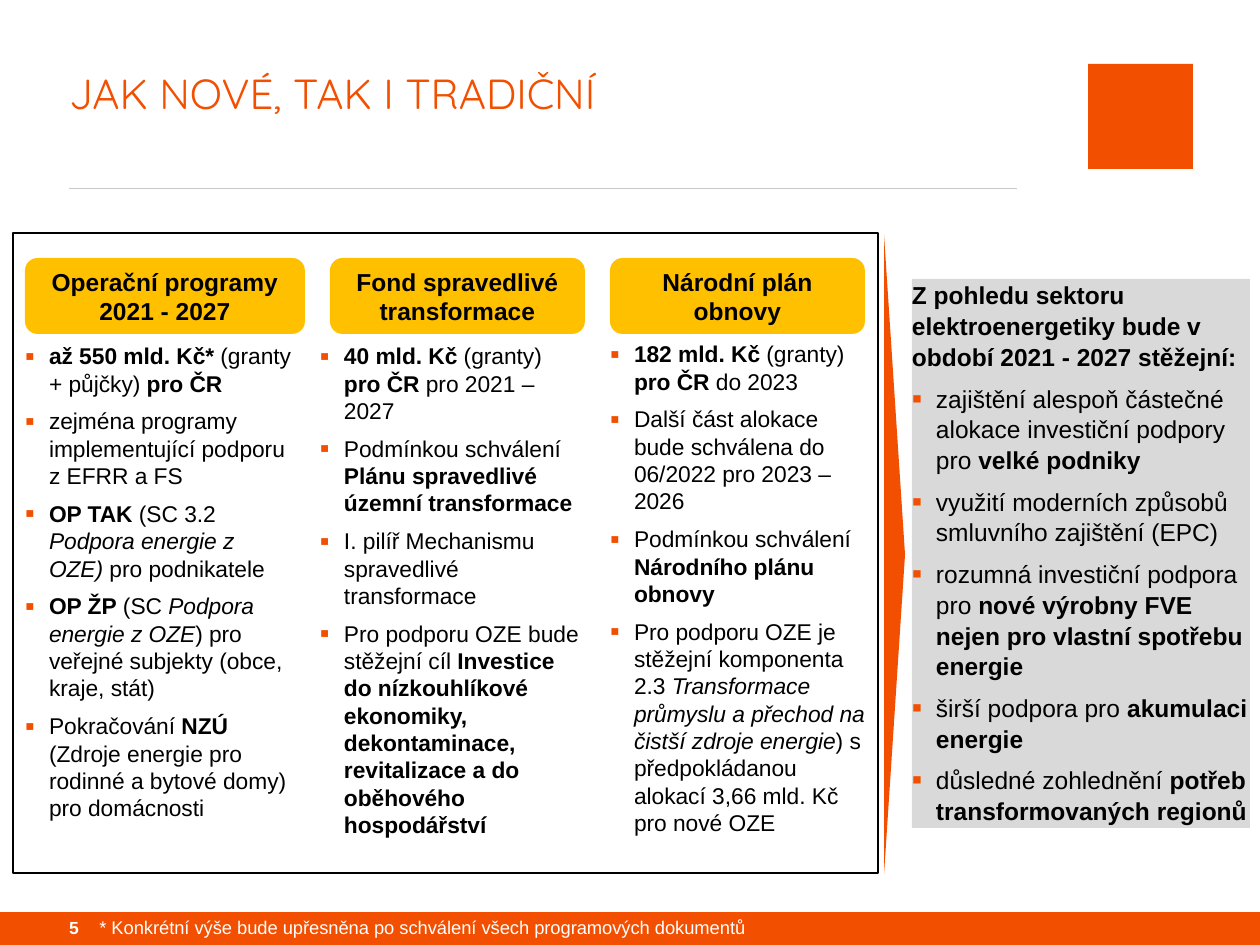
from dataclasses import dataclass
from typing import Optional

from lxml.etree import SubElement
from pptx import Presentation
from pptx.dml.color import RGBColor
from pptx.enum.shapes import MSO_CONNECTOR as Connector, MSO_SHAPE as Shape
from pptx.enum.text import MSO_ANCHOR as Anchor, MSO_AUTO_SIZE as AutoSize, PP_ALIGN as Align
from pptx.oxml.ns import qn
from pptx.util import Emu, Pt

PX_PER_INCH = 126
COLORS = {
    "orange": "F24F00",
    "amber": "FFC000",
    "panel": "D9D9D9",
    "rule": "C8C8C8",
    "black": "000000",
    "white": "FFFFFF",
}
INDENT = 24

# A run is its text and its style: "" plain, "b" bold, "i" italic
Run = tuple[str, str]


@dataclass
class Box:
    left: int
    top: int
    width: int
    height: int


@dataclass
class ProgramColumn:
    heading: str
    pill: Box
    body: Box
    bullets: list[list[Run]]


@dataclass
class TextStyle:
    size: float
    color: str = "black"
    font: str = "Arial"
    bulleted: bool = False
    before: float = 0
    after: float = 0
    spacing: Optional[float] = None
    align: Align = Align.LEFT


COLUMN_STYLE = TextStyle(13, bulleted=True, before=6)
PILL_STYLE = TextStyle(14, align=Align.CENTER)
PANEL_HEADING_STYLE = TextStyle(14, after=6, spacing=1.05)
PANEL_BULLET_STYLE = TextStyle(14, bulleted=True, after=6, spacing=1.05)

COLUMNS = [
    ProgramColumn("Operační programy 2021 - 2027", Box(25, 258, 280, 76), Box(25, 342, 268, 484), [
        [("až 550 mld. Kč* ", "b"), ("(granty + půjčky) ", ""), ("pro ČR", "b")],
        [("zejména programy implementující podporu z EFRR a FS", "")],
        [("OP TAK", "b"), (" (SC 3.2 ", ""), ("Podpora energie z OZE) ", "i"), ("pro podnikatele", "")],
        [("OP ŽP", "b"), (" (SC ", ""), ("Podpora energie z OZE", "i"),
         (") pro veřejné subjekty (obce, kraje, stát)", "")],
        [("Pokračování ", ""), ("NZÚ", "b"),
         (" (Zdroje energie pro rodinné a bytové domy) pro domácnosti", "")],
    ]),
    ProgramColumn("Fond spravedlivé transformace", Box(330, 258, 255, 76), Box(320, 342, 263, 538), [
        [("40 mld. Kč ", "b"), ("(granty) ", ""), ("pro ČR ", "b"), ("pro 2021 – 2027", "")],
        [("Podmínkou schválení ", ""), ("Plánu spravedlivé územní transformace", "b")],
        [("I. pilíř Mechanismu spravedlivé transformace", "")],
        [("Pro podporu OZE bude stěžejní cíl ", ""),
         ("Investice do nízkouhlíkové ekonomiky, dekontaminace, revitalizace "
          "a do oběhového hospodářství", "b")],
    ]),
    ProgramColumn("Národní plán obnovy", Box(610, 258, 255, 76), Box(610, 340, 256, 566), [
        [("182 mld. Kč ", "b"), ("(granty) ", ""), ("pro ČR", "b"), (" do 2023", "")],
        [("Další část alokace bude schválena do 06/2022 pro 2023 – 2026", "")],
        [("Podmínkou schválení ", ""), ("Národního plánu obnovy", "b")],
        [("Pro podporu OZE je stěžejní komponenta 2.3 ", ""),
         ("Transformace průmyslu a přechod na čistší zdroje energie", "i"),
         (") s předpokládanou alokací 3,66 mld. Kč pro nové OZE", "")],
    ]),
]

PANEL_HEADING = "Z pohledu sektoru elektroenergetiky bude v období 2021 - 2027 stěžejní:"
PANEL_BULLETS = [
    [("zajištění alespoň částečné alokace investiční podpory pro ", ""), ("velké podniky", "b")],
    [("využití moderních způsobů smluvního zajištění (EPC)", "")],
    [("rozumná investiční podpora pro ", ""), ("nové výrobny FVE nejen pro vlastní spotřebu energie", "b")],
    [("širší podpora pro ", ""), ("akumulaci energie", "b")],
    [("důsledné zohlednění ", ""), ("potřeb transformovaných regionů", "b")],
]


def px(value: int) -> Emu:
    return Emu(round(value * 914400 / PX_PER_INCH))


def place(box: Box) -> tuple[Emu, ...]:
    return px(box.left), px(box.top), px(box.width), px(box.height)


def color(name: str) -> RGBColor:
    return RGBColor.from_string(COLORS[name])


def add_bullet(paragraph) -> None:
    properties = paragraph._p.get_or_add_pPr()
    properties.set("marL", str(px(INDENT)))
    properties.set("indent", str(-px(INDENT)))
    bullet_color = SubElement(properties, qn("a:buClr"))
    SubElement(bullet_color, qn("a:srgbClr"), val=COLORS["orange"])
    SubElement(properties, qn("a:buSzPct"), val="120000")
    SubElement(properties, qn("a:buFont"), typeface="Arial")
    SubElement(properties, qn("a:buChar"), char="▪")


def prepare_frame(frame, margins: bool = False, anchor: Anchor = Anchor.TOP) -> None:
    frame.word_wrap = True
    frame.auto_size = AutoSize.NONE
    frame.vertical_anchor = anchor
    if not margins:
        frame.margin_left = frame.margin_top = frame.margin_right = frame.margin_bottom = 0


def write(frame, runs: list[Run], style: TextStyle) -> None:
    """Fill the first empty paragraph, or append a new one."""
    first = not frame.paragraphs[0].runs
    paragraph = frame.paragraphs[0] if first else frame.add_paragraph()
    if style.bulleted:
        add_bullet(paragraph)
    paragraph.alignment = style.align
    paragraph.space_before = Pt(0 if first else style.before)
    paragraph.space_after = Pt(style.after)
    if style.spacing:
        paragraph.line_spacing = style.spacing
    for text, emphasis in runs:
        run = paragraph.add_run()
        run.text = text
        run.font.name = style.font
        run.font.size = Pt(style.size)
        run.font.bold = emphasis == "b"
        run.font.italic = emphasis == "i"
        run.font.color.rgb = color(style.color)


def add_block(slide, kind: Shape, box: Box, fill: Optional[str] = None, line: Optional[str] = None):
    shape = slide.shapes.add_shape(kind, *place(box))
    shape.shadow.inherit = False
    if fill:
        shape.fill.solid()
        shape.fill.fore_color.rgb = color(fill)
    else:
        shape.fill.background()
    if line:
        shape.line.color.rgb = color(line)
        shape.line.width = Pt(1)
    else:
        shape.line.fill.background()
    return shape


def add_text(slide, box: Box, paragraphs: list[list[Run]], style: TextStyle,
             margins: bool = False, anchor: Anchor = Anchor.TOP) -> None:
    frame = slide.shapes.add_textbox(*place(box)).text_frame
    prepare_frame(frame, margins, anchor)
    for runs in paragraphs:
        write(frame, runs, style)


def add_column(slide, column: ProgramColumn) -> None:
    frame = add_block(slide, Shape.ROUNDED_RECTANGLE, column.pill, "amber").text_frame
    prepare_frame(frame, margins=True, anchor=Anchor.MIDDLE)
    write(frame, [(column.heading, "b")], PILL_STYLE)
    add_text(slide, column.body, column.bullets, COLUMN_STYLE)


def main() -> None:
    presentation = Presentation()
    presentation.slide_width, presentation.slide_height = px(1260), px(945)
    slide = presentation.slides.add_slide(presentation.slide_layouts[5])

    # Title, rule and plain emblem square
    title = slide.shapes.title
    title.left, title.top, title.width, title.height = place(Box(69, 60, 948, 54))
    prepare_frame(title.text_frame)
    write(title.text_frame, [("JAK NOVÉ, TAK I TRADIČNÍ", "")],
          TextStyle(24, "orange", "Quicksand", spacing=Pt(33)))
    rule = slide.shapes.add_connector(Connector.STRAIGHT, px(69), px(188), px(1017), px(188))
    rule.line.color.rgb = color("rule")
    rule.line.width = Pt(0.5)
    SubElement(rule._element.spPr, qn("a:effectLst"))
    add_block(slide, Shape.RECTANGLE, Box(1088, 64, 105, 105), "orange")

    # Footer band with page number and footnote
    add_block(slide, Shape.RECTANGLE, Box(0, 912, 1260, 33), "orange")
    add_text(slide, Box(69, 917, 43, 21), [[("5", "b")]], TextStyle(10, "white"), anchor=Anchor.MIDDLE)
    add_text(slide, Box(87, 910, 994, 29),
             [[("* Konkrétní výše bude upřesněna po schválení všech programových dokumentů", "")]],
             TextStyle(10.5, "white"), margins=True)

    # Framed programme columns
    add_block(slide, Shape.RECTANGLE, Box(13, 233, 865, 640), line="black")
    for column in COLUMNS:
        add_column(slide, column)

    # Pointer towards the conclusions panel
    pointer = add_block(slide, Shape.ISOSCELES_TRIANGLE, Box(575, 544, 639, 21), "orange")
    pointer.rotation = 90
    panel = add_block(slide, Shape.RECTANGLE, Box(912, 279, 338, 549), "panel").text_frame
    prepare_frame(panel)
    write(panel, [(PANEL_HEADING, "b")], PANEL_HEADING_STYLE)
    for bullet in PANEL_BULLETS:
        write(panel, bullet, PANEL_BULLET_STYLE)

    presentation.save("out.pptx")


if __name__ == "__main__":
    main()
